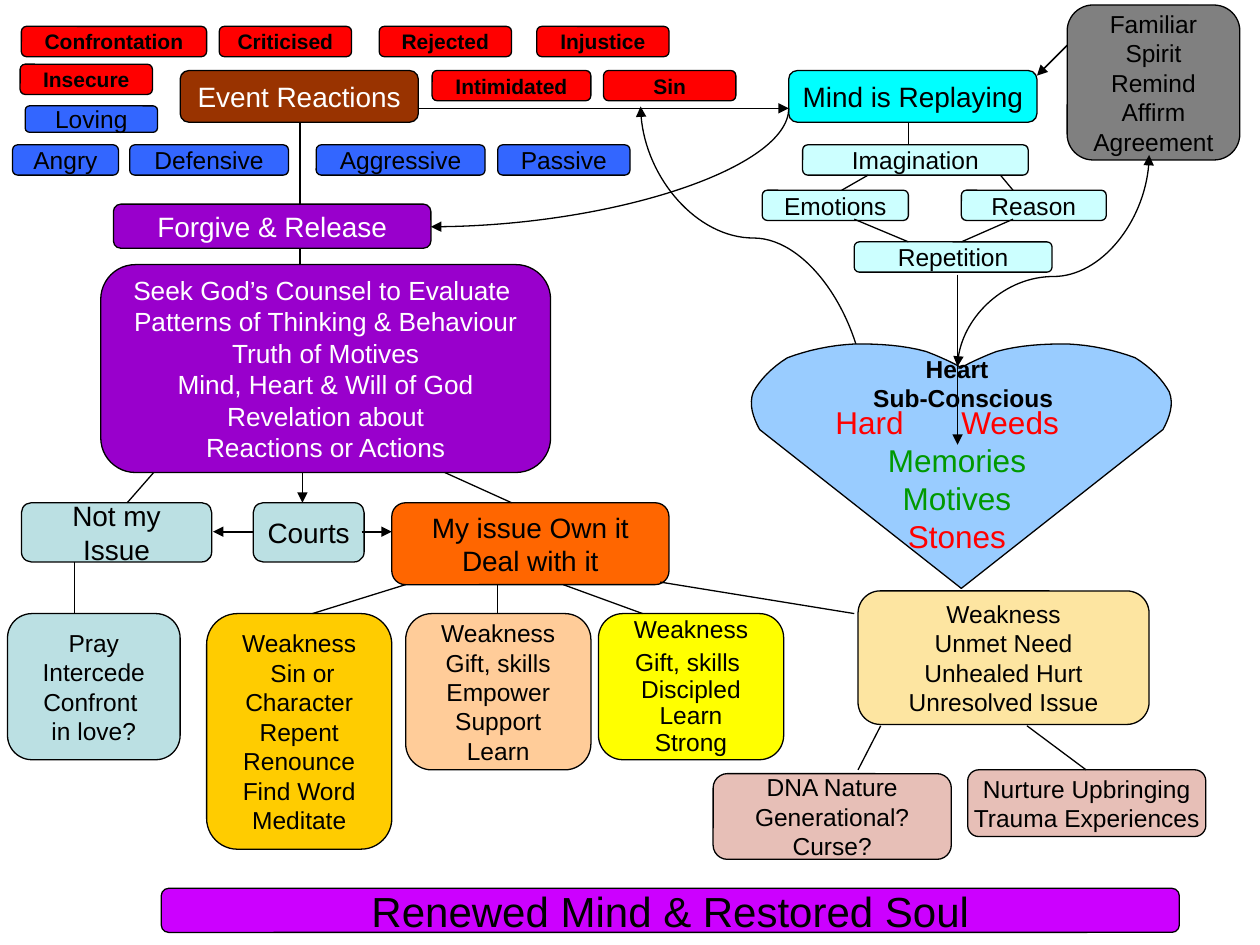
"""Build the flow slide on reactions, forgiveness and the renewed mind."""
from dataclasses import dataclass
from itertools import pairwise

from lxml import etree
from pptx import Presentation
from pptx import util as u
from pptx.dml.color import RGBColor
from pptx.enum import shapes, text
from pptx.oxml.ns import qn

HUES = {
    "black": "000000", "white": "FFFFFF", "red": "FF0000", "green": "009900",
    "blue": "3366FF", "brown": "993300", "cyan": "00FFFF", "ice": "CCFFFF",
    "gray": "808080", "purple": "9900CC", "violet": "CC00FF", "teal": "BBE0E3",
    "orange": "FF6600", "gold": "FFCC00", "peach": "FFCC99", "yellow": "FFFF00",
    "sand": "FDE5A1", "rose": "E7BFB7", "sky": "99CCFF",
}


@dataclass
class Box:
    words: str
    x: float
    y: float
    w: float
    h: float
    fill: str
    size: int = 14
    tint: str = "black"
    bold: bool = False
    pitch: float = 1.0


@dataclass
class Link:
    x1: float
    y1: float
    x2: float
    y2: float
    width: float = 0.75
    head: bool = False
    tail: bool = False


@dataclass
class Curve:
    link: Link
    turn: int
    kind: str
    bend: int = 0


def red(words: str, x: float, y: float, w: float = 1.05) -> Box:
    """Return a bold trigger label."""
    return Box(words, x, y, w, 0.24, "red", 12, bold=True)


def pill(words: str, x: float, y: float, w: float, fill: str) -> Box:
    """Return a one-line label."""
    return Box(words, x, y, w, 0.24, fill)


BOXES = [
    Box("Event Reactions", 1.43, 0.56, 1.89, 0.41, "brown", 16, "white"),
    Box("Mind is Replaying", 6.26, 0.56, 1.97, 0.41, "cyan", 16),
    red("Confrontation", 0.17, 0.21, 1.47),
    red("Criticised", 1.74, 0.21),
    red("Rejected", 3.01, 0.21),
    red("Injustice", 4.26, 0.21),
    red("Insecure", 0.16, 0.51),
    red("Intimidated", 3.43, 0.56, 1.26),
    red("Sin", 4.79, 0.56),
    Box("Loving", 0.2, 0.84, 1.05, 0.21, "blue"),
    pill("Angry", 0.1, 1.15, 0.84, "blue"),
    pill("Defensive", 1.03, 1.15, 1.26, "blue"),
    pill("Aggressive", 2.51, 1.15, 1.34, "blue"),
    pill("Passive", 3.95, 1.15, 1.05, "blue"),
    pill("Imagination", 6.37, 1.15, 1.79, "ice"),
    pill("Emotions", 6.05, 1.51, 1.16, "ice"),
    pill("Reason", 7.63, 1.51, 1.15, "ice"),
    pill("Repetition", 6.78, 1.92, 1.57, "ice"),
    Box("Familiar\nSpirit\nRemind\nAffirm\nAgreement", 8.47, 0.04, 1.37, 1.23, "gray"),
    Box("Forgive & Release", 0.9, 1.62, 2.52, 0.35, "purple", 16, "white"),
    Box("Seek God’s Counsel to Evaluate \nPatterns of Thinking & Behaviour\n"
        "Truth of Motives\nMind, Heart & Will of God\nRevelation about\n"
        "Reactions or Actions", 0.8, 2.1, 3.57, 1.65, "purple", 15, "white"),
    Box("Not my\nIssue", 0.17, 3.99, 1.51, 0.47, "teal", 16),
    Box("Courts", 2.01, 3.99, 0.88, 0.47, "teal", 16),
    Box("My issue Own it\nDeal with it", 3.11, 3.99, 2.2, 0.65, "orange", 16),
    Box("Pray\nIntercede\nConfront \nin love?", 0.06, 4.87, 1.37, 1.16, "teal"),
    Box("Weakness\n Sin or\nCharacter\nRepent\nRenounce\nFind Word\nMeditate",
        1.64, 4.87, 1.47, 1.87, "gold"),
    Box("Weakness\nGift, skills\nEmpower\nSupport\nLearn", 3.22, 4.87, 1.47, 1.24, "peach"),
    Box("Weakness\nGift, skills \nDiscipled\nLearn\nStrong", 4.75, 4.87, 1.47, 1.16,
        "yellow", pitch=0.9),
    Box("Weakness\nUnmet Need\nUnhealed Hurt\nUnresolved Issue", 6.81, 4.69, 2.31, 1.06, "sand"),
    Box("DNA Nature\nGenerational?\nCurse?", 5.66, 6.14, 1.89, 0.68, "rose"),
    Box("Nurture Upbringing\nTrauma Experiences", 7.68, 6.11, 1.89, 0.53, "rose"),
    Box("Renewed Mind & Restored Soul", 1.28, 7.05, 8.08, 0.35, "violet", 24),
]
LINKS = [
    Link(2.38, 0.97, 2.38, 1.62), Link(2.38, 1.98, 2.38, 2.1),
    Link(3.53, 3.75, 4.06, 3.99), Link(1.22, 3.75, 1.01, 3.99),
    Link(0.59, 4.46, 0.59, 4.87), Link(3.22, 4.64, 2.48, 4.87),
    Link(3.95, 4.64, 3.95, 4.87), Link(4.47, 4.64, 5.1, 4.87),
    Link(5.24, 4.62, 6.78, 4.87), Link(6.99, 5.76, 6.81, 6.11),
    Link(8.15, 5.76, 8.62, 6.11), Link(7.21, 0.97, 7.21, 1.15),
    Link(6.89, 1.39, 6.68, 1.51), Link(7.94, 1.39, 8.04, 1.51),
    Link(6.78, 1.74, 7.21, 1.92), Link(8.04, 1.74, 7.63, 1.92),
    Link(3.32, 0.86, 6.26, 0.86, tail=True),
    Link(2.4, 3.75, 2.4, 3.99, 1, tail=True),
    Link(1.69, 4.22, 2.01, 4.22, 1, head=True),
    Link(2.87, 4.22, 3.11, 4.22, 1, tail=True),
    Link(8.47, 0.36, 8.23, 0.6, 1, tail=True),
]
CURVES = [
    Curve(Link(7.18, 1.15, 4.78, 2.94, tail=True), 90, "curvedConnector3", 56500),
    Curve(Link(7.52, 1.31, 9.2, 2.83, head=True, tail=True), 270, "curvedConnector3", 42600),
    Curve(Link(4.37, -0.09, 5.31, 2.75, tail=True), 90, "curvedConnector2"),
]
STEM = Link(7.6, 2.18, 7.6, 3.53, tail=True)
AXIS, TIP = 7.63, 4.67
LOBE = [
    ((7.63, 2.92), (7.57, 2.88), (7.43, 2.82), (7.35, 2.79)),
    ((7.35, 2.79), (7.17, 2.74), (6.98, 2.73), (6.79, 2.73)),
    ((6.79, 2.73), (6.59, 2.74), (6.41, 2.78), (6.25, 2.84)),
    ((6.25, 2.84), (6.12, 2.92), (6.03, 3.02), (5.98, 3.11)),
    ((5.98, 3.11), (5.94, 3.21), (5.98, 3.32), (6.03, 3.41)),
]


def hue(name: str) -> RGBColor:
    """Look up a colour."""
    return RGBColor.from_string(HUES[name])


def write(frame, words: str, *, size: int, tints: list[str], bold=False, pitch=1.0, wrap=False):
    """Write centred lines, the last tint serving all remaining lines."""
    frame.word_wrap = wrap
    frame.margin_left = frame.margin_right = frame.margin_top = frame.margin_bottom = 0
    frame.text = words
    for i, para in enumerate(frame.paragraphs):
        para.alignment = text.PP_ALIGN.CENTER
        para.line_spacing = pitch
        font = para.runs[0].font
        font.name, font.size, font.bold = "Arial", u.Pt(size), bold
        font.color.rgb = hue(tints[min(i, len(tints) - 1)])


def paint(shape, fill: str):
    """Give a shape its fill and thin black outline."""
    shape.shadow.inherit = False
    shape.fill.solid()
    shape.fill.fore_color.rgb = hue(fill)
    shape.line.color.rgb = hue("black")
    shape.line.width = u.Pt(0.75)


def place(slide, box: Box):
    """Draw a rounded box with its text."""
    shape = slide.shapes.add_shape(shapes.MSO_SHAPE.FLOWCHART_ALTERNATE_PROCESS,
                                   *map(u.Inches, (box.x, box.y, box.w, box.h)))
    paint(shape, box.fill)
    frame = shape.text_frame
    frame.vertical_anchor = text.MSO_ANCHOR.MIDDLE
    write(frame, box.words, size=box.size, tints=[box.tint], bold=box.bold, pitch=box.pitch)
    if box.pitch < 1:
        frame.paragraphs[1].space_before = u.Pt(4)


def join(slide, link: Link, kind=shapes.MSO_CONNECTOR.STRAIGHT):
    """Draw a connector with its arrowheads."""
    wire = slide.shapes.add_connector(kind, *map(u.Inches, (link.x1, link.y1, link.x2, link.y2)))
    wire.line.color.rgb = hue("black")
    wire.line.width = u.Pt(link.width)
    props = wire._element.spPr
    for end, shown in (("a:headEnd", link.head), ("a:tailEnd", link.tail)):
        if shown:
            etree.SubElement(props.find(qn("a:ln")), qn(end), type="triangle")
    etree.SubElement(props, qn("a:effectLst"))
    return props


def arc(slide, curve: Curve):
    """Draw a turned curved connector."""
    props = join(slide, curve.link, shapes.MSO_CONNECTOR.CURVE)
    props.find(qn("a:xfrm")).set("rot", str(curve.turn * 60000))
    geom = props.find(qn("a:prstGeom"))
    geom.set("prst", curve.kind)
    if curve.bend:
        etree.SubElement(geom.find(qn("a:avLst")), qn("a:gd"),
                         name="adj1", fmla=f"val {curve.bend}")


def heart(slide, steps: int = 8):
    """Draw the heart from one lobe and its mirror."""
    left = [LOBE[0][0]]
    for knots in LOBE:
        for t in (n / steps for n in range(1, steps + 1)):
            row = knots
            while len(row) > 1:
                row = [tuple(a + (b - a) * t for a, b in zip(p, q)) for p, q in pairwise(row)]
            left.append(row[0])
    right = [(2 * AXIS - x, y) for x, y in reversed(left)]
    dots = [(u.Inches(x), u.Inches(y)) for x, y in left + [(AXIS, TIP)] + right]
    pen = slide.shapes.build_freeform(*dots[0])
    pen.add_line_segments(dots[1:])
    paint(pen.convert_to_shape(), "sky")


def label(slide, y: float, h: float, words: str, **style):
    """Add a text box inside the heart."""
    area = slide.shapes.add_textbox(*map(u.Inches, (6.57, y, 2.05, h)))
    write(area.text_frame, words, wrap=True, **style)
    return area.text_frame.paragraphs


def main():
    """Build and save the slide."""
    deck = Presentation()
    deck.slide_width, deck.slide_height = u.Inches(10), u.Inches(7.5)
    slide = deck.slides.add_slide(deck.slide_layouts[6])
    for box in BOXES:
        place(slide, box)
    for link in LINKS:
        join(slide, link)
    for curve in CURVES:
        arc(slide, curve)
    heart(slide)
    title = label(slide, 2.81, 0.47, "Heart\nSub-Conscious", size=14, tints=["black"], bold=True)
    title[1]._p.get_or_add_pPr().set("marL", str(u.Inches(0.1)))
    join(slide, STEM)
    soil = label(slide, 3.2, 1.43, "Hard\tWeeds\nMemories\nMotives\nStones",
                 size=18, tints=["red", "green", "green", "red"])
    soil[0].alignment = text.PP_ALIGN.LEFT
    props = soil[0]._p.get_or_add_pPr()
    props.set("marL", str(u.Inches(0.06)))
    props.set("indent", "0")
    tabs = etree.SubElement(props, qn("a:tabLst"))
    etree.SubElement(tabs, qn("a:tab"), pos=str(u.Inches(1.22)), algn="l")
    deck.save("out.pptx")


if __name__ == "__main__":
    main()
